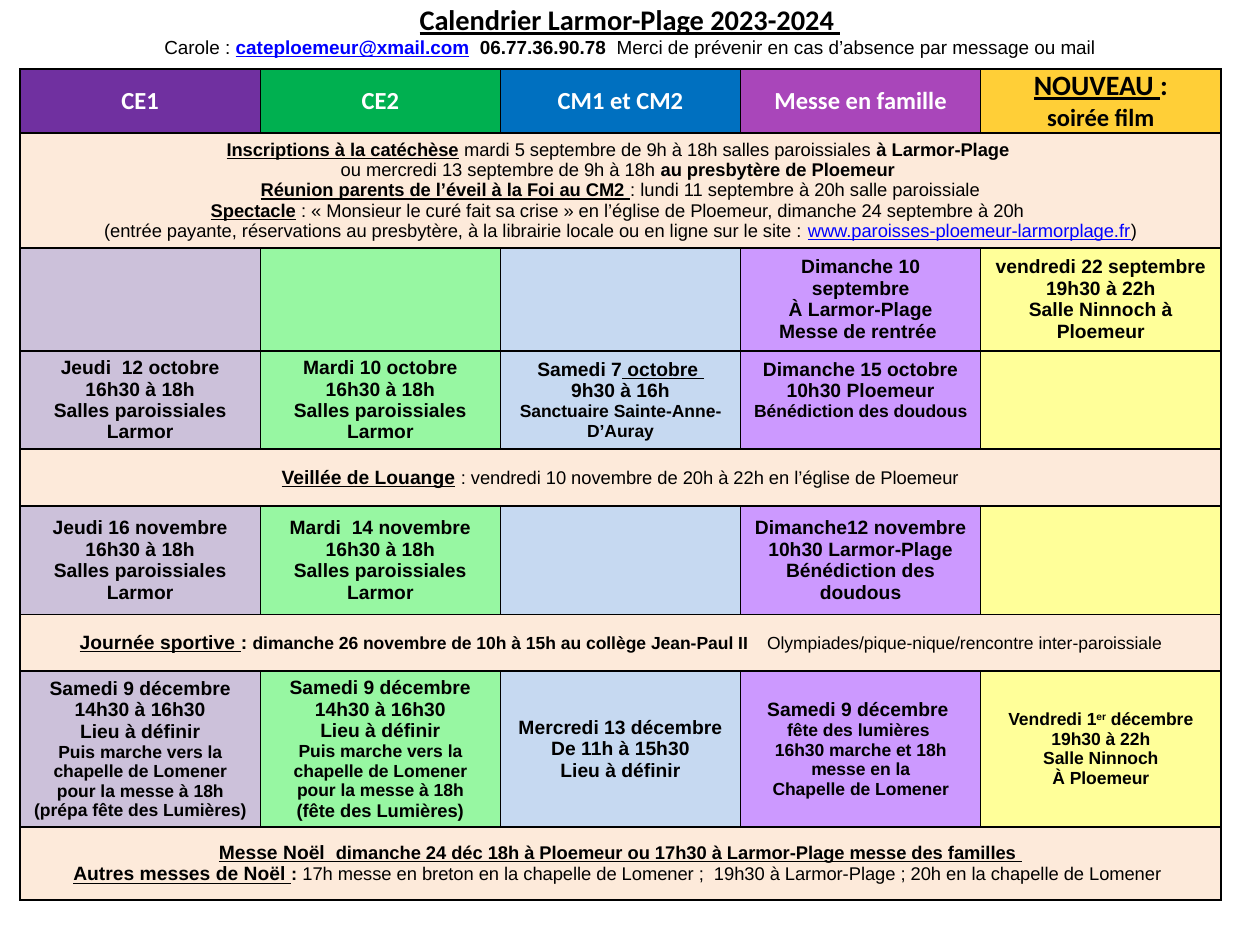
from dataclasses import dataclass, field
from typing import Optional

from lxml.etree import SubElement as Sub
from pptx import Presentation
from pptx.dml.color import RGBColor as RGB
from pptx.enum.text import MSO_ANCHOR as ANC, MSO_AUTO_SIZE as FIT, PP_ALIGN as AL
from pptx.oxml.ns import qn
from pptx.util import Inches, Pt

W, H = Inches(10), Inches(7.5)
LEFT, TOP, COL = 1.6, 7.3, 19.06
BLACK, WHITE, LINK, PEACH = "000000", "FFFFFF", "0000FF", "FDEADA"
HEADS = ["7030A0", "00B050", "0070C0", "A946BA", "FFCF37"]
TINTS = ["CCC1DA", "97F7A2", "C6D9F1", "CC99FF", "FFFF99"]


@dataclass
class Run:
    text: str
    size: float = 11
    bold: bool = True
    underline: bool = False
    color: str = BLACK
    name: str = "Arial"
    raw: dict = field(default_factory=dict)


@dataclass
class Row:
    height: float
    cells: list
    fills: list
    margin: Optional[float] = None


def pct_x(share: float) -> int:
    return int(W * share / 100)


def pct_y(share: float) -> int:
    return int(H * share / 100)


def rgb(code: str) -> RGB:
    return RGB.from_string(code)


def head(text: str, size: float = 14, color: str = WHITE, **fmt) -> Run:
    return Run(text, size, color=color, name="Calibri", **fmt)


def small(text: str, **fmt) -> Run:
    return Run(text, 10, **fmt)


def plain(text: str, size: float = 10.5) -> Run:
    return Run(text, size, bold=False)


def mid(text: str, **fmt) -> Run:
    return Run(text, 10.5, **fmt)


def under(text: str, size: float = 11) -> Run:
    return Run(text, size, underline=True)


def write(tf, lines: list) -> None:
    for i, line in enumerate(lines):
        p = tf.paragraphs[0] if i == 0 else tf.add_paragraph()
        p.alignment = AL.CENTER
        for item in line if isinstance(line, list) else [line]:
            run = Run(item) if isinstance(item, str) else item
            r = p.add_run()
            r.text = run.text
            fmt = {"size": Pt(run.size), "bold": run.bold,
                   "underline": run.underline, "name": run.name}
            for key, value in fmt.items():
                setattr(r.font, key, value)
            r.font.color.rgb = rgb(run.color)
            for key, value in run.raw.items():
                r.font._element.set(key, value)


def border(cell) -> None:
    pr = cell._tc.get_or_add_tcPr()
    for i, side in enumerate(("a:lnL", "a:lnR", "a:lnT", "a:lnB")):
        ln = Sub(pr, qn(side), w=str(Pt(1)))
        Sub(Sub(ln, qn("a:solidFill")), qn("a:srgbClr"), val=BLACK)
        pr.insert(i, ln)


def fill_row(table, n: int, row: Row) -> None:
    table.rows[n].height = pct_y(row.height)
    for c, color in enumerate(row.fills):
        cell = table.cell(n, c)
        cell.fill.solid()
        cell.fill.fore_color.rgb = rgb(color)
        cell.vertical_anchor = ANC.MIDDLE
        if row.margin is not None:
            for side in ("left", "right", "top", "bottom"):
                setattr(cell, f"margin_{side}", Inches(row.margin))
        border(cell)
    for c, lines in enumerate(row.cells):
        write(table.cell(n, c).text_frame, lines)
    if len(row.cells) == 1:
        table.cell(n, 0).merge(table.cell(n, len(row.fills) - 1))


def band(height: float, lines: list) -> Row:
    return Row(height, [lines], [PEACH] * len(TINTS))


def session(day: str) -> list:
    return [day, "16h30 à 18h", "Salles paroissiales Larmor"]


def advent(last: Run) -> list:
    return ["Samedi 9 décembre", "14h30 à 16h30", "Lieu à définir",
            small("Puis marche vers la chapelle de Lomener pour la messe à 18h"), last]


TITLE = [
    head("Calendrier Larmor-Plage 2023-2024 ", 16.2, BLACK, underline=True),
    [plain("Carole : ", 10.8), Run("cateploemeur@xmail.com", 10.8, underline=True, color=LINK),
     Run("  06.77.36.90.78  ", 10.8),
     plain("Merci de prévenir en cas d’absence par message ou mail", 10.8)],
]

ROWS = [
    Row(6.8, [[head("CE1")], [head("CE2")], [head("CM1 et CM2")], [head("Messe en famille")],
              [[head("NOUVEAU ", 16, BLACK, underline=True), head(":", 16, BLACK)],
               head("soirée film", color=BLACK)]], HEADS, 0),
    band(12.1, [
        [under("Inscriptions à la catéchèse", 10.5),
         plain(" mardi 5 septembre de 9h à 18h salles paroissiales "), mid("à Larmor-Plage ")],
        [plain("ou mercredi 13 septembre de 9h à 18h "), mid("au presbytère de Ploemeur ")],
        [under("Réunion parents de l’éveil à la Foi au CM2 ", 10.5),
         plain(": lundi 11 septembre à 20h salle paroissiale")],
        [under("Spectacle", 10.5),
         plain(" : « Monsieur le curé fait sa crise » en l’église de Ploemeur, "
               "dimanche 24 septembre à 20h ")],
        [plain("(entrée payante, réservations au presbytère, à la librairie locale "
               "ou en ligne sur le site : "),
         mid("www.paroisses-ploemeur-larmorplage.fr", bold=False, underline=True, color=LINK),
         plain(")")]]),
    Row(10.9, [[], [], [], ["Dimanche 10 septembre", "À Larmor-Plage", "Messe de rentrée "],
               ["vendredi 22 septembre 19h30 à 22h", "Salle Ninnoch à Ploemeur"]], TINTS),
    Row(10.4, [session("Jeudi  12 octobre"), session("Mardi 10 octobre"),
               [["Samedi 7", under(" octobre ")], "9h30 à 16h",
                small("Sanctuaire Sainte-Anne-D’Auray")],
               ["Dimanche 15 octobre", "10h30 Ploemeur", small("Bénédiction des doudous")],
               []], TINTS),
    band(6, [[under("Veillée de Louange"), " ",
              plain(": vendredi 10 novembre de 20h à 22h en l’église de Ploemeur")]]),
    Row(11.5, [session("Jeudi 16 novembre"), session("Mardi  14 novembre"), [],
               ["Dimanche12 novembre", "10h30 Larmor-Plage", "Bénédiction des doudous"],
               []], TINTS),
    band(6, [[under("Journée sportive "), ": ",
              small("dimanche 26 novembre de 10h à 15h au collège Jean-Paul II"),
              small(" ", raw={"spc": "830"}),
              plain("Olympiades/pique-nique/rencontre inter-paroissiale", 10)]]),
    Row(16.5, [advent(small("(prépa fête des Lumières)")), advent(mid("(fête des Lumières)")),
               ["Mercredi 13 décembre", "De 11h à 15h30", "Lieu à définir"],
               ["Samedi 9 décembre ", small("fête des lumières "),
                small("16h30 marche et 18h messe en la"), small("Chapelle de Lomener")],
               [[small("Vendredi 1"), small("er", raw={"baseline": "30000"}),
                 small(" décembre")],
                small("19h30 à 22h"), small("Salle Ninnoch"), small("À Ploemeur")]], TINTS),
    band(7.7, [
        [under("Messe Noël  "),
         under("dimanche 24 déc 18h à Ploemeur ou 17h30 à Larmor-Plage messe des familles ", 10.5)],
        [under("Autres messes de Noël "), mid(": "),
         plain("17h messe en breton en la chapelle de Lomener ;  19h30 à Larmor-Plage ; "
               "20h en la chapelle de Lomener ")]]),
]


def main() -> None:
    prs = Presentation()
    prs.slide_width, prs.slide_height = W, H
    s = prs.slides.add_slide(prs.slide_layouts[5])
    sp = s.shapes.title
    for key, value in {"left": 0, "top": 0, "width": W, "height": pct_y(6.4)}.items():
        setattr(sp, key, value)
    tf = sp.text_frame
    for key, value in {"auto_size": FIT.NONE, "vertical_anchor": ANC.MIDDLE, "word_wrap": True,
                       "margin_top": 0, "margin_bottom": 0}.items():
        setattr(tf, key, value)
    write(tf, TITLE)

    height = sum(row.height for row in ROWS)
    table = s.shapes.add_table(len(ROWS), len(TINTS), pct_x(LEFT), pct_y(TOP),
                               pct_x(COL * len(TINTS)), pct_y(height)).table
    table.first_row = table.horz_banding = False
    for col in table.columns:
        col.width = pct_x(COL)
    for n, row in enumerate(ROWS):
        fill_row(table, n, row)
    table.cell(3, 3).margin_bottom = Inches(0.21)
    prs.save("out.pptx")


if __name__ == "__main__":
    main()
